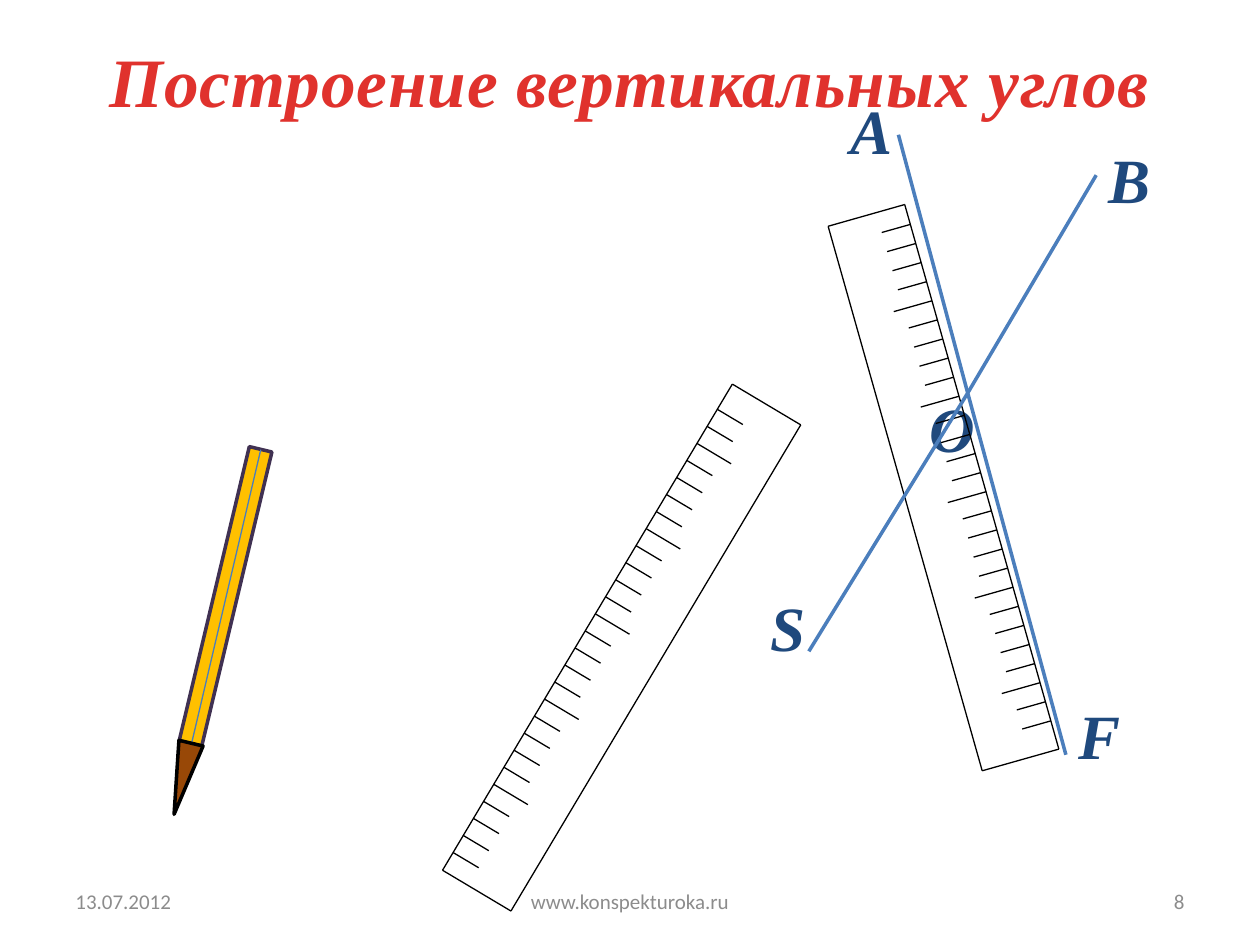
import math
from dataclasses import dataclass

import lxml.etree
import pptx
import pptx.dml.color
import pptx.enum.shapes
import pptx.enum.text
import pptx.oxml.ns
import pptx.util

Pt = pptx.util.Pt
SHAPE = pptx.enum.shapes.MSO_SHAPE
ALIGN = pptx.enum.text.PP_ALIGN
ANCHOR = pptx.enum.text.MSO_ANCHOR
Point = tuple[float, float]


@dataclass(frozen=True)
class Theme:
    title: str = "E0322D"
    letter: str = "1F497D"
    ray: str = "4B7EBC"
    ink: str = "000000"
    footer: str = "8C8C8C"
    wood: str = "FFC000"
    wood_edge: str = "403152"
    tip: str = "984807"
    serif: str = "Times New Roman"
    sans: str = "Calibri"
    title_size: float = 39.6
    letter_size: float = 36
    footer_size: float = 12
    thick: float = 2
    thin: float = 0.75


THEME = Theme()


@dataclass(frozen=True)
class Box:
    left: float
    top: float
    width: float
    height: float

    def lengths(self) -> list[int]:
        return [Pt(side) for side in (self.left, self.top, self.width, self.height)]


@dataclass(frozen=True)
class Ruler:
    """A ruler whose scale runs from start at angle degrees, body clockwise of it."""
    start: Point
    angle: float
    length: float = 323.4
    depth: float = 45.5
    first_tick: float = 11.8
    tick_step: float = 11.34
    tick_count: int = 27
    short_tick: float = 17
    long_tick: float = 22.7

    def at(self, along: float, across: float) -> Point:
        cos, sin = math.cos(math.radians(self.angle)), math.sin(math.radians(self.angle))
        return (self.start[0] + along * cos - across * sin,
                self.start[1] + along * sin + across * cos)


@dataclass(frozen=True)
class Letter:
    text: str
    box: Box


@dataclass(frozen=True)
class FooterPart:
    text: str
    box: Box
    align: ALIGN


VERTEX = (553, 224.6)
END_A, END_B, END_S, END_F = (513.4, 77), (626.4, 100.1), (462.2, 372.2), (609.1, 431.3)
LETTER_A = Letter("А", Box(478.8, 49, 38.9, 51.1))
LETTER_O = Letter("O", Box(524.2, 218.9, 41, 51.1))
LETTER_B = Letter("В", Box(626.4, 77, 38.9, 51.1))
LETTER_S = Letter("S", Box(433.4, 332.6, 34.6, 51.1))
LETTER_F = Letter("F", Box(609.1, 394.6, 38.9, 51.1))
RULER_ON_AF = Ruler(start=(517, 116.9), angle=74.2)
RULER_BELOW = Ruler(start=(252.9, 497.3), angle=-59.2)
FOOTER = [
    FooterPart("13.07.2012", Box(36, 500.4, 168, 28.8), ALIGN.LEFT),
    FooterPart("8", Box(516, 500.4, 168, 28.8), ALIGN.RIGHT),
    FooterPart("www.konspekturoka.ru", Box(246, 500.4, 228, 28.8), ALIGN.CENTER),
]


def rgb(value: str) -> pptx.dml.color.RGBColor:
    return pptx.dml.color.RGBColor.from_string(value)


def add_line(shapes, start: Point, end: Point, color: str, weight: float) -> None:
    line = shapes.add_connector(pptx.enum.shapes.MSO_CONNECTOR.STRAIGHT,
                                *(Pt(value) for value in (*start, *end)))
    line.line.color.rgb = rgb(color)
    line.line.width = Pt(weight)
    lxml.etree.SubElement(line.element.spPr, pptx.oxml.ns.qn("a:effectLst"))


def add_ray(shapes, end: Point) -> None:
    add_line(shapes, VERTEX, end, THEME.ray, THEME.thick)


def add_text(shapes, text: str, box: Box, font: str, size: float, color: str,
             align=ALIGN.LEFT, anchor=ANCHOR.TOP, wrap=True, strong=False):
    frame = shapes.add_textbox(*box.lengths()).text_frame
    frame.word_wrap = wrap
    frame.vertical_anchor = anchor
    frame.text = text
    paragraph = frame.paragraphs[0]
    paragraph.alignment = align
    run = paragraph.runs[0]
    run.font.name = font
    run.font.size = Pt(size)
    run.font.color.rgb = rgb(color)
    run.font.bold = run.font.italic = strong
    return frame


def add_letter(shapes, letter: Letter) -> None:
    frame = add_text(shapes, letter.text, letter.box, THEME.serif, THEME.letter_size,
                     THEME.letter, wrap=False, strong=True)
    frame.auto_size = pptx.enum.text.MSO_AUTO_SIZE.SHAPE_TO_FIT_TEXT


def add_title(shapes) -> None:
    frame = add_text(shapes, "Построение вертикальных углов", Box(36, 21.6, 648, 90),
                     THEME.serif, THEME.title_size, THEME.title, ALIGN.CENTER, strong=True)
    frame.margin_top = 0
    frame.paragraphs[0].runs[0].font._element.set("spc", "50")


def add_ruler(shapes, ruler: Ruler) -> None:
    group = shapes.add_group_shape().shapes
    corners = [ruler.at(0, 0), ruler.at(ruler.length, 0),
               ruler.at(ruler.length, ruler.depth), ruler.at(0, ruler.depth)]
    for corner, following in zip(corners, corners[1:] + corners[:1]):
        add_line(group, corner, following, THEME.ink, THEME.thin)
    for number in range(1, ruler.tick_count + 1):
        along = ruler.first_tick + (number - 1) * ruler.tick_step
        across = ruler.short_tick if number % 5 else ruler.long_tick
        add_line(group, ruler.at(along, 0), ruler.at(along, across), THEME.ink, THEME.thin)


def add_pencil_part(shapes, kind: SHAPE, box: Box, rotation: float,
                    fill: str, edge: str) -> None:
    part = shapes.add_shape(kind, *box.lengths())
    part.rotation = rotation
    part.shadow.inherit = False
    part.fill.solid()
    part.fill.fore_color.rgb = rgb(fill)
    part.line.color.rgb = rgb(edge)
    part.line.width = Pt(THEME.thick)


def add_pencil(shapes) -> None:
    group = shapes.add_group_shape().shapes
    add_pencil_part(group, SHAPE.RECTANGLE, Box(42.5, 334.1, 172.8, 13.3), 283.4,
                    THEME.wood, THEME.wood_edge)
    add_line(group, (109.5, 424.8), (149, 257), THEME.ray, THEME.thin)
    add_pencil_part(group, SHAPE.ISOSCELES_TRIANGLE, Box(97.2, 424.1, 14.2, 41.8), 193.4,
                    THEME.tip, THEME.ink)


def main() -> None:
    deck = pptx.Presentation()
    deck.slide_width, deck.slide_height = Pt(720), Pt(540)
    shapes = deck.slides.add_slide(deck.slide_layouts[6]).shapes

    add_title(shapes)
    for end in (END_A, END_B):
        add_ray(shapes, end)
    for letter in (LETTER_A, LETTER_O, LETTER_B):
        add_letter(shapes, letter)
    add_ruler(shapes, RULER_ON_AF)
    add_pencil(shapes)
    add_ray(shapes, END_S)
    add_letter(shapes, LETTER_S)
    add_ruler(shapes, RULER_BELOW)
    add_ray(shapes, END_F)
    add_letter(shapes, LETTER_F)
    for part in FOOTER:
        add_text(shapes, part.text, part.box, THEME.sans, THEME.footer_size, THEME.footer,
                 part.align, ANCHOR.MIDDLE)
    deck.save("out.pptx")


if __name__ == "__main__":
    main()
